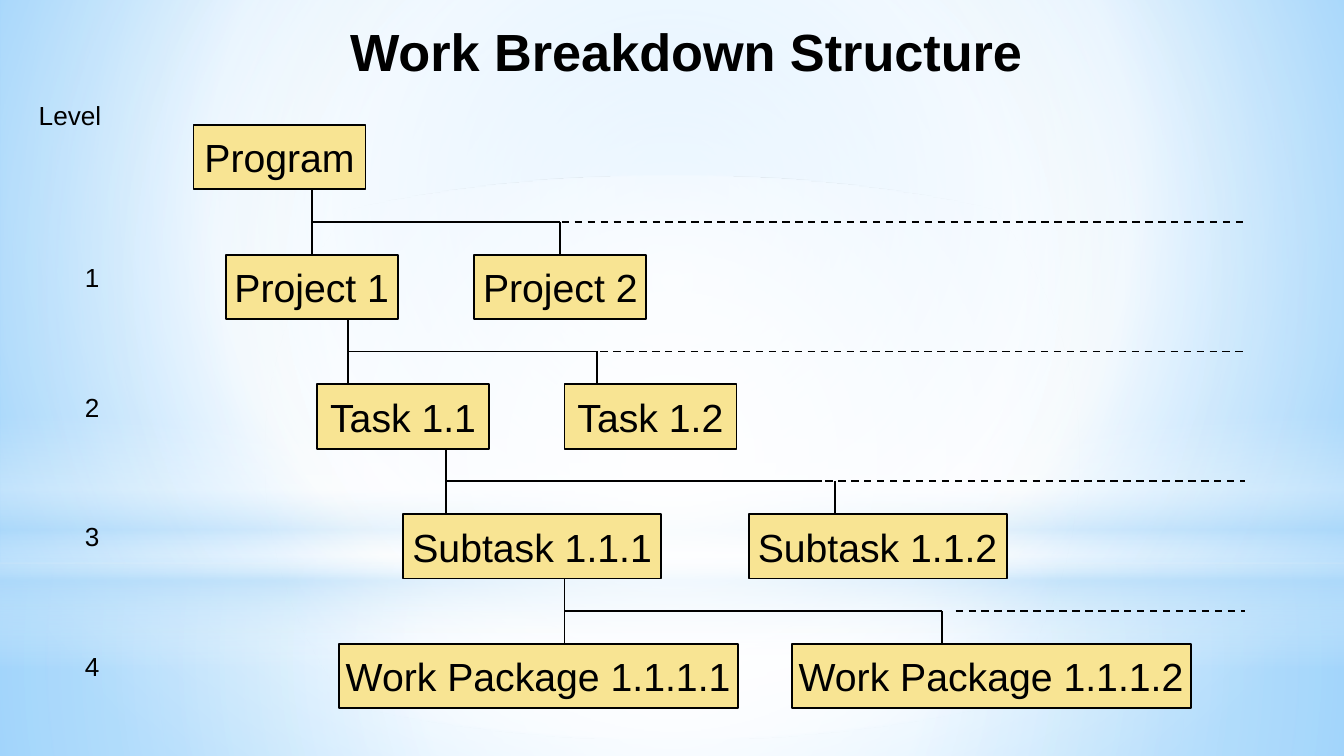
from lxml import etree
from pptx import Presentation
from pptx.dml.color import RGBColor
from pptx.enum import dml, shapes, text
from pptx.oxml.ns import qn
from pptx.util import Inches, Pt

COLORS = {"ink": "000000", "box": "F8E493", "white": "FFFFFF", "pale": "B4DCFA",
          "sky": "9ED5FF", "blue": "5BB9FF"}
CENTER = (50, 50, 50, 50)
PAGE_WIDTH = 10
ROW_TOP, ROW_STEP, BOX_HEIGHT = 0.93, 0.965, 0.48
RAIL_OFFSET, RAIL_END = 0.72, 9.26

# box width, then each box's name and left edge
ROWS = [
    (1.28, [("Program", 1.44)]),
    (1.28, [("Project 1", 1.68), ("Project 2", 3.53)]),
    (1.28, [("Task 1.1", 2.36), ("Task 1.2", 4.2)]),
    (1.92, [("Subtask 1.1.1", 3), ("Subtask 1.1.2", 5.57)]),
    (2.97, [("Work Package 1.1.1.1", 2.52), ("Work Package 1.1.1.2", 5.89)]),
]
# trunk x, branch x, end of the solid rail, start of the dashed rail
LINKS = [
    (2.32, 4.17, 4.17, 4.18),
    (2.59, 4.44, 4.44, 4.37),
    (3.32, 6.21, 6.12, 6.14),
    (4.2, 7.01, 7.01, 7.11),
]


def color(name):
    return RGBColor.from_string(COLORS[name])


def write(frame, words, size=21, bold=False, align=text.PP_ALIGN.CENTER,
          anchor=text.MSO_ANCHOR.MIDDLE, wrap=True):
    frame.word_wrap = wrap
    frame.auto_size = text.MSO_AUTO_SIZE.NONE
    frame.vertical_anchor = anchor
    para = frame.paragraphs[0]
    para.alignment = align
    span = para.add_run()
    span.text = words
    span.font.name = "Arial"
    span.font.size = Pt(size)
    span.font.bold = bold
    span.font.color.rgb = color("ink")


def shade(fill, host, stops, focus=None):
    """Fill with (position, colour, opacity) stops, around focus or downwards."""
    fill.gradient()
    gradient = host.find(".//" + qn("a:gradFill"))
    for child in list(gradient):
        gradient.remove(child)
    stop_list = etree.SubElement(gradient, qn("a:gsLst"))
    for position, name, opacity in stops:
        stop = etree.SubElement(stop_list, qn("a:gs"), pos=str(position * 1000))
        tint = etree.SubElement(stop, qn("a:srgbClr"), val=COLORS[name])
        if opacity < 100:
            etree.SubElement(tint, qn("a:alpha"), val=str(opacity * 1000))
    if focus:
        radial = etree.SubElement(gradient, qn("a:path"))
        radial.set("path", "circle")
        sides = {side: str(value * 1000) for side, value in zip("ltrb", focus)}
        etree.SubElement(radial, qn("a:fillToRect"), **sides)
    else:
        etree.SubElement(gradient, qn("a:lin"), ang="5400000", scaled="0")


class Diagram:
    def __init__(self, page):
        self.page = page

    def shape(self, kind, left, top, width, height):
        shape = self.page.shapes.add_shape(
            kind, Inches(left), Inches(top), Inches(width), Inches(height))
        shape.shadow.inherit = False
        return shape

    def glow(self, top, height, stops, focus=CENTER, kind=shapes.MSO_SHAPE.RECTANGLE):
        glow = self.shape(kind, 0, top, PAGE_WIDTH, height)
        glow.line.fill.background()
        shade(glow.fill, glow._element, stops, focus)

    def box(self, words, left, top, width):
        box = self.shape(shapes.MSO_SHAPE.RECTANGLE, left, top, width, BOX_HEIGHT)
        box.fill.solid()
        box.fill.fore_color.rgb = color("box")
        box.line.color.rgb = color("ink")
        box.line.width = Pt(1)
        write(box.text_frame, words, wrap=False)
        return box

    def label(self, words, left, top, width, align=text.PP_ALIGN.CENTER):
        label = self.page.shapes.add_textbox(
            Inches(left), Inches(top), Inches(width), Inches(BOX_HEIGHT))
        write(label.text_frame, words, size=14, align=align, anchor=text.MSO_ANCHOR.TOP)

    def line(self, x1, y1, x2, y2, dashed=False):
        line = self.page.shapes.add_connector(
            shapes.MSO_CONNECTOR.STRAIGHT, Inches(x1), Inches(y1), Inches(x2), Inches(y2))
        line.line.color.rgb = color("ink")
        line.line.width = Pt(1)
        if dashed:
            line.line.dash_style = dml.MSO_LINE.DASH
        etree.SubElement(line._element.spPr, qn("a:effectLst"))
        return line

    def drop(self, x, top, box):
        """Vertical line to a box, joined to it where it meets the middle of its top."""
        line = self.line(x, top, x, box.top / Inches(1))
        if abs(box.left + box.width / 2 - Inches(x)) < Inches(0.02):
            line.end_connect(box, 0)

    def title(self, words):
        title = self.page.shapes.title
        title.left, title.top = Inches(0.68), Inches(0.09)
        title.width, title.height = Inches(8.85), Inches(0.53)
        write(title.text_frame, words, size=28, bold=True, anchor=text.MSO_ANCHOR.TOP)
        title._element.getparent().append(title._element)  # in front of the backdrop

    def backdrop(self):
        shade(self.page.background.fill, self.page._element,
              [(0, "sky", 100), (60, "white", 100), (100, "blue", 100)], (20, 10, 20, 60))
        self.glow(4.19, 1.44, [(0, "white", 91), (37, "white", 76), (100, "pale", 79)])
        self.glow(0, 4.19, [(0, "white", 89), (48, "white", 62), (100, "pale", 79)])
        self.glow(3.09, 1.88, [(0, "white", 0), (29, "white", 30), (45, "pale", 40),
                               (55, "white", 26), (65, "pale", 60), (100, "white", 0)],
                  focus=None)
        self.glow(1.31, 4.19, [(0, "white", 100), (56, "white", 0)],
                  kind=shapes.MSO_SHAPE.OVAL)


def main():
    deck = Presentation()
    deck.slide_width, deck.slide_height = Inches(PAGE_WIDTH), Inches(PAGE_WIDTH * 9 / 16)
    diagram = Diagram(deck.slides.add_slide(deck.slide_layouts[5]))
    diagram.backdrop()
    diagram.title("Work Breakdown Structure")
    diagram.label("Level", 0.19, 0.69, 0.96, align=text.PP_ALIGN.LEFT)

    rows = []
    for level, (width, boxes) in enumerate(ROWS):
        top = ROW_TOP + level * ROW_STEP
        rows.append([diagram.box(name, left, top, width) for name, left in boxes])
        if level:
            diagram.label(str(level), 0.51, top, 0.35)

    for level, (trunk, branch, solid_end, dash_start) in enumerate(LINKS):
        top = ROW_TOP + level * ROW_STEP
        rail = top + RAIL_OFFSET
        first, second = rows[level + 1]
        diagram.drop(trunk, top + BOX_HEIGHT, first)
        diagram.drop(branch, rail, second)
        diagram.line(trunk, rail, solid_end, rail)
        diagram.line(dash_start, rail, RAIL_END, rail, dashed=True)

    deck.save("out.pptx")


if __name__ == "__main__":
    main()
